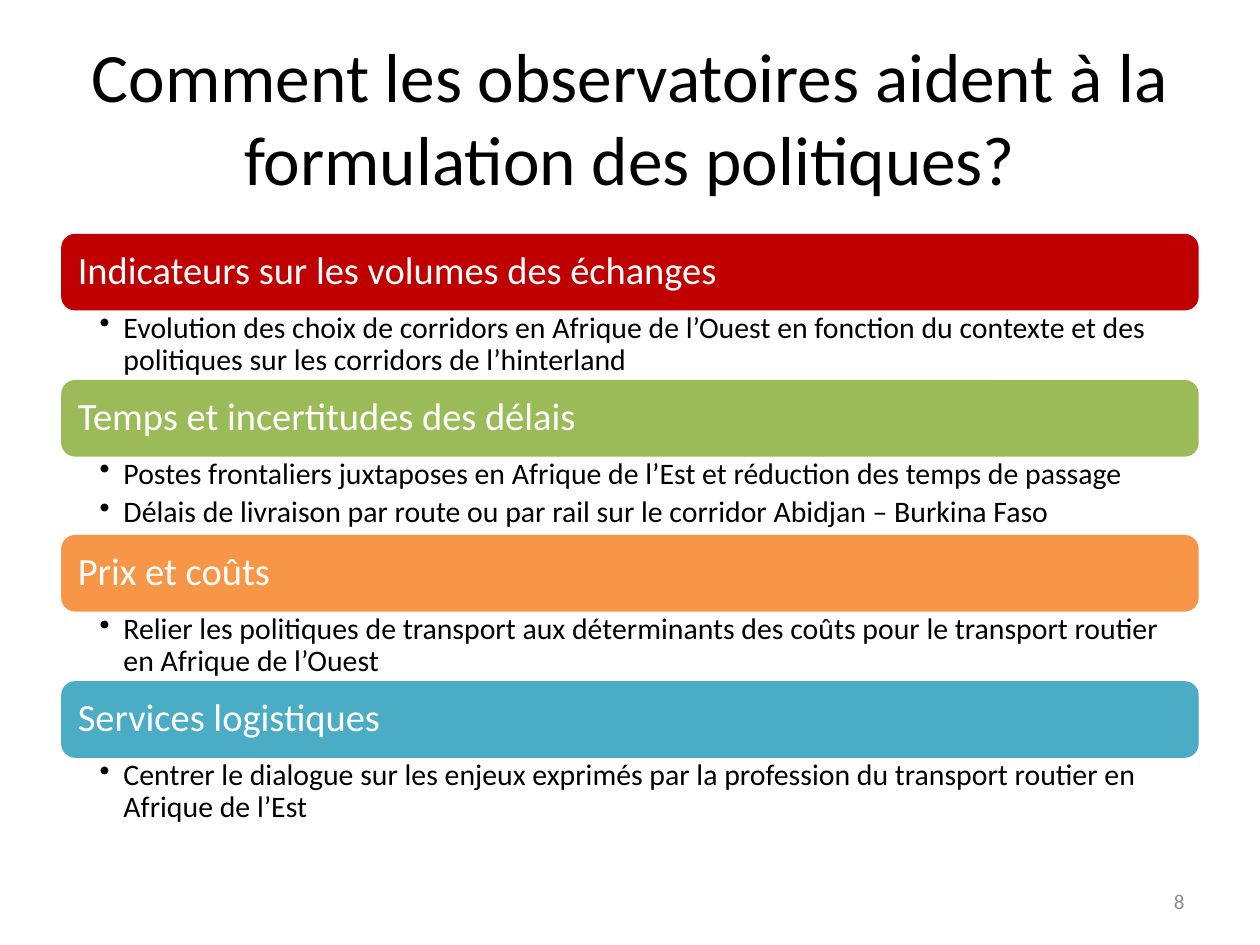
from pptx import Presentation
from pptx.dml.color import RGBColor
from pptx.enum.shapes import MSO_SHAPE
from pptx.enum.text import MSO_ANCHOR, MSO_AUTO_SIZE, PP_ALIGN
from pptx.oxml.ns import qn
from pptx.util import Inches, Pt
from lxml.etree import SubElement

LEFT, WIDTH = 0.5, 9
BAR_HEIGHT = 0.58
FIRST_BAR_TOP = 1.87
SECTIONS = [
    ("Indicateurs sur les volumes des échanges", "C00000", 0.58, [
        "Evolution des choix de corridors en Afrique de l’Ouest en fonction du contexte "
        "et des politiques sur les corridors de l’hinterland"]),
    ("Temps et incertitudes des délais", "9BBB59", 0.65, [
        "Postes frontaliers juxtaposes en Afrique de l’Est et réduction des temps de passage",
        "Délais de livraison par route ou par rail sur le corridor Abidjan – Burkina Faso"]),
    ("Prix et coûts", "F79646", 0.58, [
        "Relier les politiques de transport aux déterminants des coûts pour le transport "
        "routier en Afrique de l’Ouest"]),
    ("Services logistiques", "4BACC6", 0.58, [
        "Centrer le dialogue sur les enjeux exprimés par la profession du transport "
        "routier en Afrique de l’Est"]),
]


def color(value):
    return RGBColor.from_string(value)


class SlideBuilder:
    """Hold the text style and the current slide, and draw its elements."""

    font_name = "Calibri"

    def __init__(self, slide):
        self.slide = slide

    def add_run(self, paragraph, text, size, text_color):
        run = paragraph.add_run()
        run.text = text
        run.font.name = self.font_name
        run.font.size = Pt(size)
        run.font.color.rgb = color(text_color)

    def set_frame(self, frame, anchor, margins):
        frame.word_wrap = True
        frame.auto_size = MSO_AUTO_SIZE.NONE
        frame.vertical_anchor = anchor
        (frame.margin_left, frame.margin_top,
         frame.margin_right, frame.margin_bottom) = map(Inches, margins)

    def add_title(self, text):
        title = self.slide.shapes.title
        title.left, title.top = Inches(LEFT), Inches(0.3)
        title.width, title.height = Inches(WIDTH), Inches(1.25)
        self.set_frame(title.text_frame, MSO_ANCHOR.MIDDLE, (0.1, 0.05, 0.1, 0.05))
        paragraph = title.text_frame.paragraphs[0]
        paragraph.alignment = PP_ALIGN.CENTER
        self.add_run(paragraph, text, 39.6, "000000")

    def add_bar(self, text, fill_color, top):
        bar = self.slide.shapes.add_shape(
            MSO_SHAPE.ROUNDED_RECTANGLE, Inches(LEFT), Inches(top),
            Inches(WIDTH), Inches(BAR_HEIGHT))
        bar.shadow.inherit = False
        bar.fill.solid()
        bar.fill.fore_color.rgb = color(fill_color)
        bar.line.color.rgb = color(fill_color)
        bar.line.width = Pt(2)
        self.set_frame(bar.text_frame, MSO_ANCHOR.MIDDLE, (0.09, 0.09, 0.09, 0.09))
        paragraph = bar.text_frame.paragraphs[0]
        paragraph.alignment = PP_ALIGN.LEFT
        paragraph.line_spacing = 0.9
        self.add_run(paragraph, text, 22, "FFFFFF")

    def add_bullets(self, items, top, height):
        box = self.slide.shapes.add_textbox(
            Inches(LEFT), Inches(top), Inches(WIDTH), Inches(height))
        frame = box.text_frame
        self.set_frame(frame, MSO_ANCHOR.TOP, (0.29, 0.03, 0.17, 0.03))
        for index, item in enumerate(items):
            paragraph = frame.add_paragraph() if index else frame.paragraphs[0]
            properties = paragraph._p.get_or_add_pPr()
            properties.set("marL", str(Inches(0.19)))
            properties.set("indent", str(-Inches(0.19)))
            SubElement(properties, qn("a:buChar")).set("char", "•")
            paragraph.level = 1
            paragraph.line_spacing = 0.9
            paragraph.space_after = Pt(3.4)
            self.add_run(paragraph, item, 17, "000000")

    def add_page_number(self, number):
        box = self.slide.shapes.add_textbox(
            Inches(7.17), Inches(6.95), Inches(2.33), Inches(0.4))
        self.set_frame(box.text_frame, MSO_ANCHOR.MIDDLE, (0.1, 0.05, 0.1, 0.05))
        paragraph = box.text_frame.paragraphs[0]
        paragraph.alignment = PP_ALIGN.RIGHT
        self.add_run(paragraph, number, 12, "8C8C8C")


def main():
    presentation = Presentation()
    presentation.slide_width = Inches(10)
    presentation.slide_height = Inches(7.5)
    title_only = presentation.slide_layouts.get_by_name("Title Only")
    builder = SlideBuilder(presentation.slides.add_slide(title_only))
    builder.add_title("Comment les observatoires aident à la formulation des politiques?")
    top = FIRST_BAR_TOP
    for heading, fill_color, height, items in SECTIONS:
        builder.add_bar(heading, fill_color, top)
        builder.add_bullets(items, top + BAR_HEIGHT, height)
        top += BAR_HEIGHT + height
    builder.add_page_number("8")
    presentation.save("out.pptx")


if __name__ == "__main__":
    main()
